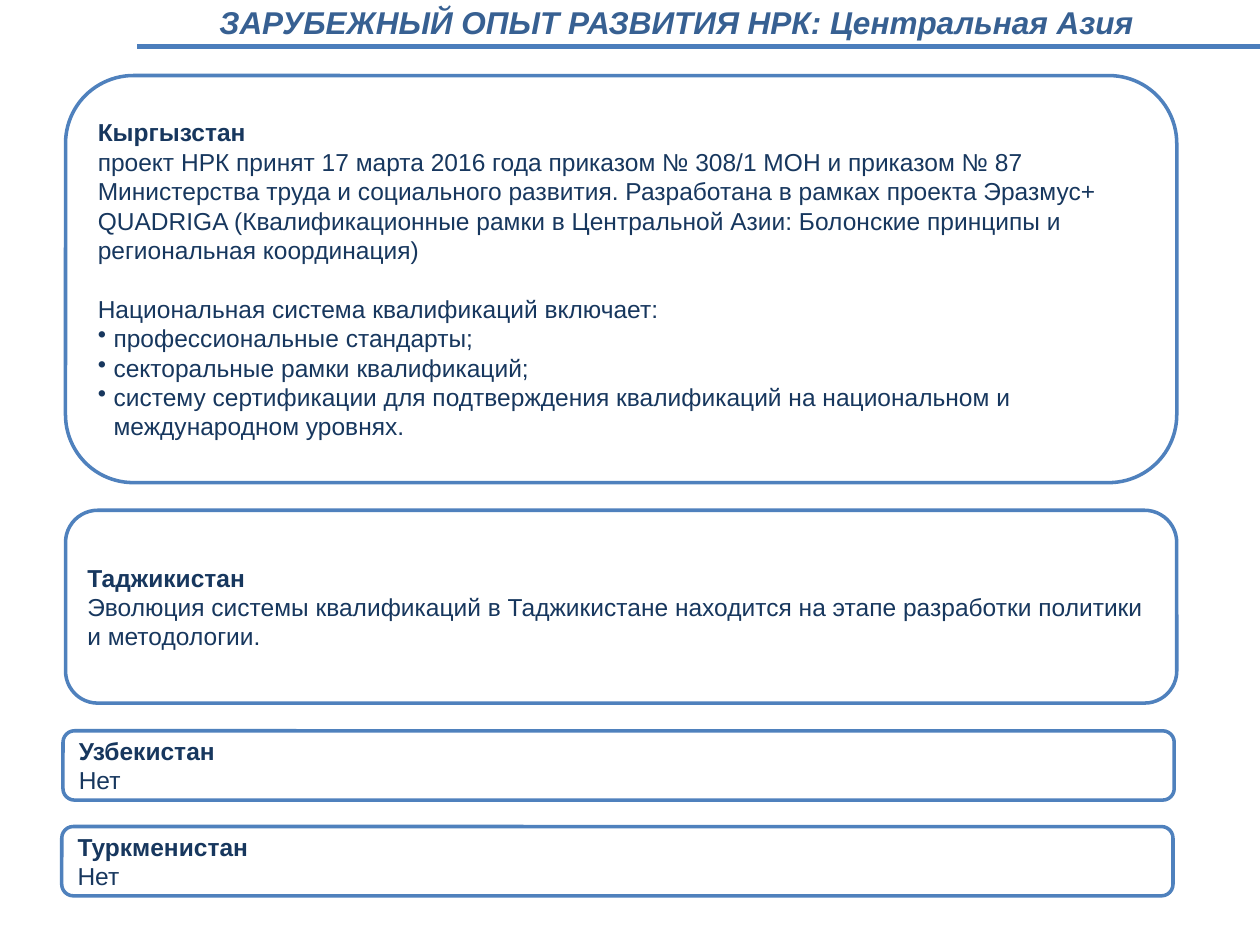
from lxml.etree import SubElement
from pptx import Presentation
from pptx.dml.color import RGBColor
from pptx.enum.shapes import MSO_CONNECTOR, MSO_SHAPE
from pptx.enum.text import MSO_ANCHOR, PP_ALIGN
from pptx.oxml.ns import qn
from pptx.util import Pt

TITLE = "ЗАРУБЕЖНЫЙ ОПЫТ РАЗВИТИЯ НРК: Центральная Азия"
KYRGYZSTAN = (
    "проект НРК принят 17 марта 2016 года приказом № 308/1 МОН и приказом № 87 "
    "Министерства труда и социального развития. Разработана в рамках проекта Эразмус+ "
    "QUADRIGA (Квалификационные рамки в Центральной Азии: Болонские принципы и "
    "региональная координация)"
)
SYSTEM_HEADING = "Национальная система квалификаций включает:"
SYSTEM_PARTS = [
    "профессиональные стандарты;",
    "секторальные рамки квалификаций;",
    "систему сертификации для подтверждения квалификаций на национальном и "
    "международном уровнях.",
]
TAJIKISTAN = (
    "Эволюция системы квалификаций в Таджикистане находится на этапе разработки "
    "политики и методологии."
)

# Country, text and box (left, top, width, height) in points
COUNTRIES = [
    ("Кыргызстан", KYRGYZSTAN, (37.44, 43.2, 635, 232.6)),
    ("Таджикистан", TAJIKISTAN, (37.44, 291.6, 635, 110.2)),
    ("Узбекистан", "Нет", (36, 417.6, 635, 39.6)),
    ("Туркменистан", "Нет", (35.28, 472.3, 635, 39.6)),
]


def color(value):
    return RGBColor.from_string(value)


def style(para, size, value, bold=False, italic=False):
    font = para.font
    font.name, font.size = "Arial", Pt(size)
    font.bold, font.italic = bold, italic
    font.color.rgb = color(value)


def add_header(page, left, top, width, height):
    # Title
    title = page.shapes.title
    title.left, title.top, title.width, title.height = map(Pt, (left, top, width, height))
    title.text_frame.text = TITLE
    title.text_frame.vertical_anchor = MSO_ANCHOR.MIDDLE
    para = title.text_frame.paragraphs[0]
    para.alignment = PP_ALIGN.CENTER
    style(para, 18, "376092", bold=True, italic=True)

    # Rule from the title to the right edge of the page
    rule = page.shapes.add_connector(
        MSO_CONNECTOR.STRAIGHT, Pt(left), Pt(26.64), Pt(720), Pt(26.64))
    rule.line.color.rgb = color("4B7EBC")
    rule.line.width = Pt(2.75)
    SubElement(rule._element.spPr, qn("a:effectLst"))


def add_para(frame, text, bold=False):
    para = frame.add_paragraph()
    para.text = text
    para.alignment = PP_ALIGN.LEFT
    style(para, 14, "17375E", bold=bold)
    return para


def add_bullet(frame, text):
    para = add_para(frame, text)
    properties = para._p.get_or_add_pPr()
    properties.set("marL", str(Pt(9)))
    properties.set("indent", str(-Pt(9)))
    SubElement(properties, qn("a:buChar")).set("char", "•")


def add_country(page, country, text, left, top, width, height):
    box = page.shapes.add_shape(
        MSO_SHAPE.ROUNDED_RECTANGLE, Pt(left), Pt(top), Pt(width), Pt(height))
    box.shadow.inherit = False
    box.fill.solid()
    box.fill.fore_color.rgb = color("FFFFFF")
    box.line.color.rgb = color("4F81BD")
    box.line.width = Pt(2)

    frame = box.text_frame
    frame.word_wrap = True
    frame.vertical_anchor = MSO_ANCHOR.MIDDLE
    frame.margin_top = frame.margin_bottom = 0
    heading = frame.paragraphs[0]
    heading.text = country
    heading.alignment = PP_ALIGN.LEFT
    style(heading, 14, "17375E", bold=True)
    add_para(frame, text)
    return frame


def add_system(frame):
    add_para(frame, SYSTEM_HEADING).space_before = Pt(16.8)
    for part in SYSTEM_PARTS:
        add_bullet(frame, part)


def main():
    deck = Presentation()
    deck.slide_width, deck.slide_height = Pt(720), Pt(540)
    page = deck.slides.add_slide(deck.slide_layouts[5])

    add_header(page, 78.48, -2.16, 616.3, 28.8)
    frames = [add_country(page, country, text, *box) for country, text, box in COUNTRIES]
    add_system(frames[0])

    deck.save("out.pptx")


if __name__ == "__main__":
    main()
